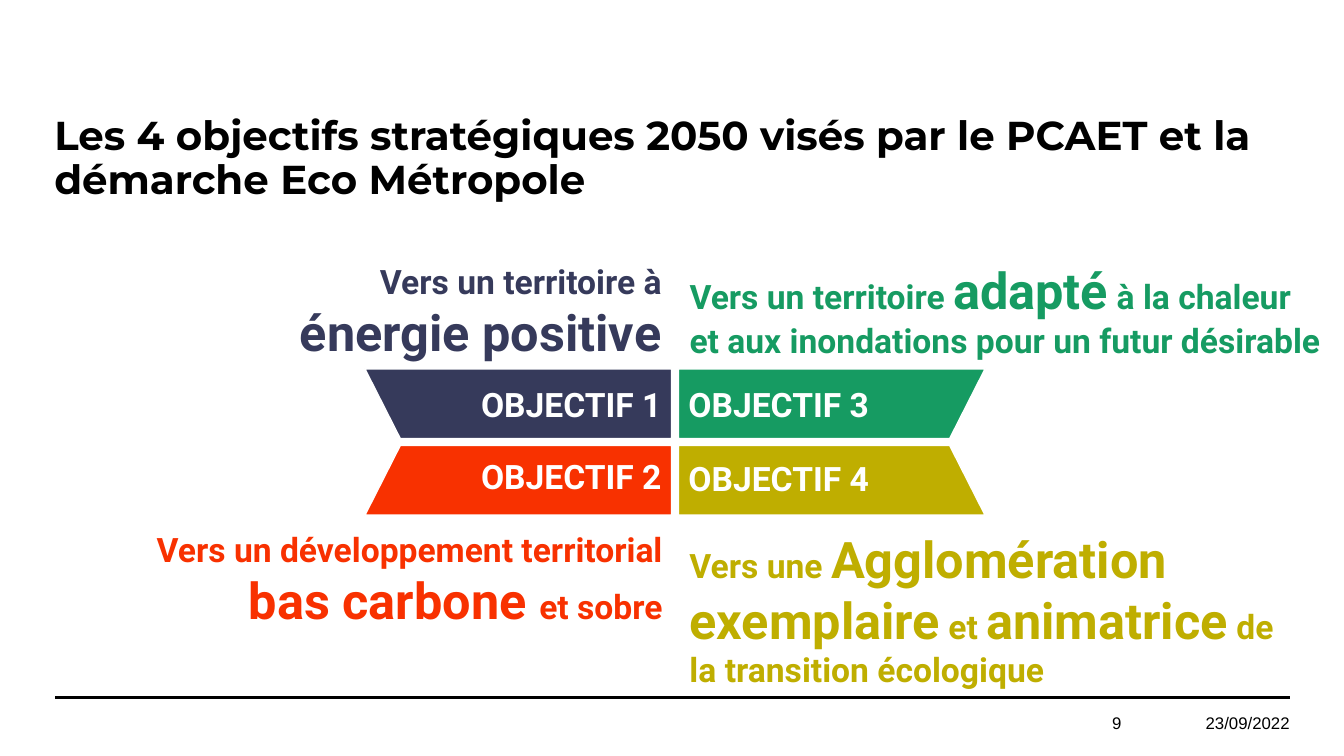
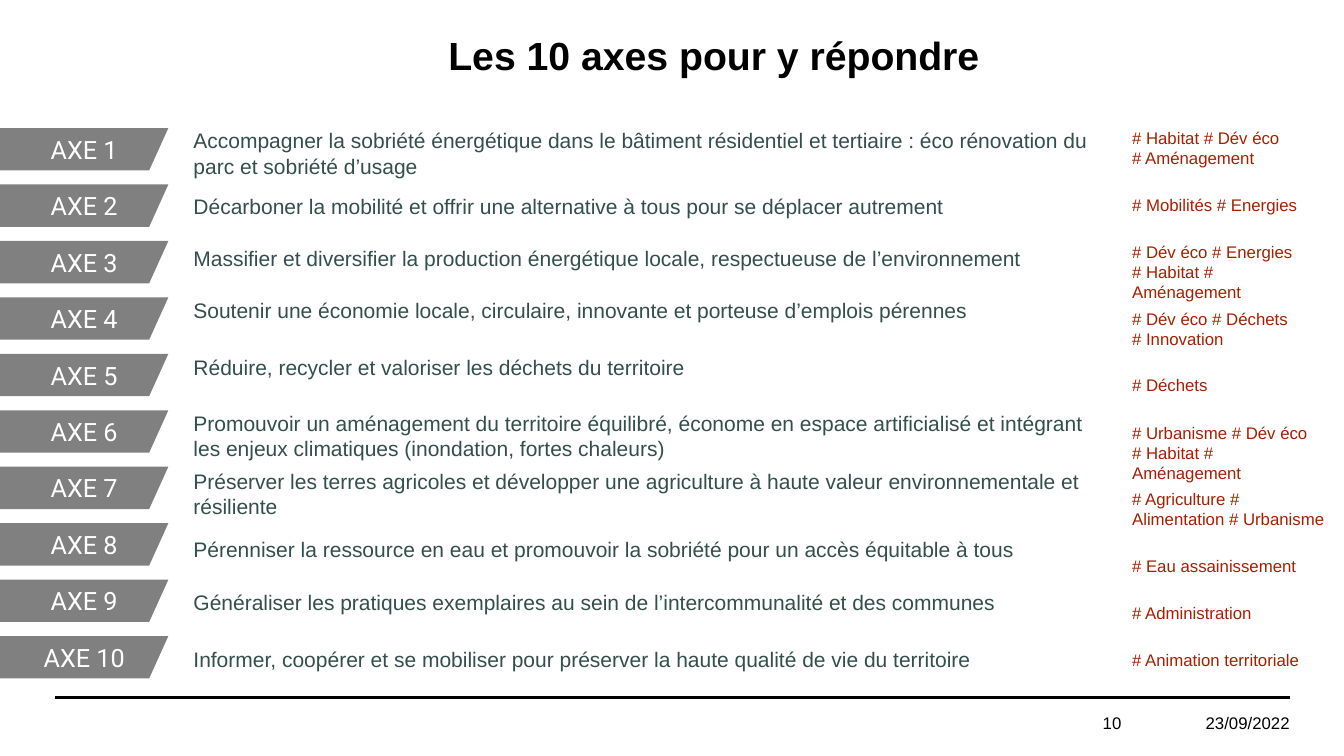
"""Build two slides on the 2050 strategic objectives and the ten action axes."""
import dataclasses
import typing

import lxml.etree
import pptx
import pptx.dml.color
import pptx.enum.shapes
import pptx.enum.text
import pptx.oxml.ns
import pptx.shapes.autoshape
import pptx.shapes.base
import pptx.slide
import pptx.text.text
import pptx.util

Inches = pptx.util.Inches
Align = pptx.enum.text.PP_ALIGN
Anchor = pptx.enum.text.MSO_ANCHOR


@dataclasses.dataclass(frozen=True)
class Theme:
    black: str = "000000"
    white: str = "FFFFFF"
    navy: str = "363A5B"
    red: str = "F83100"
    green: str = "169B62"
    olive: str = "BFAE00"
    tab: str = "808080"
    body: str = "344F4B"
    tag: str = "A62000"
    heading_size: float = 28.8
    centred_heading_size: float = 28
    accent_size: float = 36
    objective_size: float = 24
    tab_size: float = 18
    body_size: float = 15
    small_size: float = 12
    heading_font: str = "Montserrat"
    label_font: str = "Roboto"
    body_font: str = "Arial"


THEME = Theme()


@dataclasses.dataclass(frozen=True)
class Style:
    size: float
    font: str
    color: str
    bold: bool = False


@dataclasses.dataclass(frozen=True)
class Area:
    left: float
    top: float
    width: float
    height: float


@dataclasses.dataclass(frozen=True)
class Objective:
    number: int
    color: str
    on_left: bool
    on_top: bool
    area: Area
    pieces: tuple[str, ...]
    lift: float = 0


@dataclasses.dataclass(frozen=True)
class Axis:
    text: str
    centre: float
    tags: tuple[str, ...]
    tag_width: float = 2


Point = tuple[float, float]
Line = typing.Sequence[tuple[str, Style]]

OBJECTIVES = (
    Objective(1, THEME.navy, True, True, Area(2.01, 2.53, 4.65, 1.11),
              ("Vers un territoire à ", "énergie positive")),
    Objective(2, THEME.red, True, False, Area(0.9, 5.19, 5.77, 1.11),
              ("Vers un développement territorial ", "bas carbone ", "et sobre"), 0.09),
    Objective(3, THEME.green, False, True, Area(6.74, 2.52, 6.48, 1.11),
              ("Vers un territoire ", "adapté",
               " à la chaleur et aux inondations pour un futur désirable")),
    Objective(4, THEME.olive, False, False, Area(6.74, 5.21, 6.06, 1.66),
              ("Vers une ", "Agglomération", " ", "exemplaire", " et ", "animatrice",
               " de la transition écologique"), 0.05),
)

AXES = (
    Axis("Accompagner la sobriété énergétique dans le bâtiment résidentiel et tertiaire : "
         "éco rénovation du parc et sobriété d’usage", 1.52,
         ("# Habitat # Dév éco", "# Aménagement")),
    Axis("Décarboner la mobilité et offrir une alternative à tous pour se déplacer autrement",
         2.04, ("# Mobilités # Energies",)),
    Axis("Massifier et diversifier la production énergétique locale, respectueuse de "
         "l’environnement", 2.56, ("# Dév éco # Energies", "# Habitat # Aménagement")),
    Axis("Soutenir une économie locale, circulaire, innovante et porteuse d’emplois pérennes",
         3.08, ("# Dév éco # Déchets", "# Innovation")),
    Axis("Réduire, recycler et valoriser les déchets du territoire", 3.64, ("# Déchets",)),
    Axis("Promouvoir un aménagement du territoire équilibré, économe en espace artificialisé "
         "et intégrant les enjeux climatiques (inondation, fortes chaleurs)", 4.32,
         ("# Urbanisme # Dév éco", "# Habitat # Aménagement")),
    Axis("Préserver les terres agricoles et développer une agriculture à haute valeur "
         "environnementale et résiliente", 4.9,
         ("# Agriculture # Alimentation # Urbanisme",), 2.18),
    Axis("Pérenniser la ressource en eau et promouvoir la sobriété pour un accès équitable "
         "à tous", 5.45, ("# Eau assainissement",)),
    Axis("Généraliser les pratiques exemplaires au sein de l’intercommunalité et des communes",
         5.97, ("# Administration",)),
    Axis("Informer, coopérer et se mobiliser pour préserver la haute qualité de vie du "
         "territoire", 6.54, ("# Animation territoriale",)),
)


def rgb(color: str) -> pptx.dml.color.RGBColor:
    """Turn a hex string into a colour."""
    return pptx.dml.color.RGBColor.from_string(color)


def apply(target: object, values: dict[str, object]) -> None:
    """Set each named attribute on the target."""
    for name, value in values.items():
        setattr(target, name, value)


def write(frame: pptx.text.text.TextFrame, lines: typing.Sequence[Line], align: Align,
          anchor: Anchor = Anchor.MIDDLE, spacing: float = 1) -> None:
    """Fill a text frame with lines of styled spans."""
    apply(frame, {"word_wrap": True, "vertical_anchor": anchor})
    for index, line in enumerate(lines):
        para = frame.paragraphs[0] if index == 0 else frame.add_paragraph()
        apply(para, {"alignment": align, "line_spacing": spacing})
        for text, style in line:
            span = para.add_run()
            span.text = text
            apply(span.font, {"size": pptx.util.Pt(style.size), "name": style.font,
                              "bold": style.bold})
            span.font.color.rgb = rgb(style.color)


def add_text(page: pptx.slide.Slide, area: Area, lines: typing.Sequence[Line], align: Align,
             anchor: Anchor = Anchor.MIDDLE, spacing: float = 1) -> None:
    """Add a wrapped text box."""
    box = page.shapes.add_textbox(*map(Inches, dataclasses.astuple(area)))
    write(box.text_frame, lines, align, anchor, spacing)


def add_outline(page: pptx.slide.Slide, points: typing.Sequence[Point],
                color: str) -> pptx.shapes.autoshape.Shape:
    """Add a closed filled polygon without an outline."""
    corners = [(Inches(x), Inches(y)) for x, y in points]
    builder = page.shapes.build_freeform(*corners[0])
    builder.add_line_segments(corners[1:], close=True)
    shape = builder.convert_to_shape()
    shape.shadow.inherit = False
    shape.fill.solid()
    shape.fill.fore_color.rgb = rgb(color)
    shape.line.fill.background()
    return shape


def add_page(deck: pptx.presentation.Presentation, title: str, area: Area, style: Style,
             align: Align, number: int) -> pptx.slide.Slide:
    """Add a page with its title, footer rule, page number and date."""
    page = deck.slides.add_slide(deck.slide_layouts[6])
    rule = page.shapes.add_connector(pptx.enum.shapes.MSO_CONNECTOR.STRAIGHT,
                                     *map(Inches, (0.55, 6.92, 12.79, 6.92)))
    rule.line.color.rgb = rgb(THEME.black)
    rule.line.width = pptx.util.Pt(1.5)
    lxml.etree.SubElement(rule.element.spPr, pptx.oxml.ns.qn("a:effectLst"))
    add_text(page, area, [[(title, style)]], align, Anchor.TOP, 0.9)
    small = Style(THEME.small_size, THEME.body_font, THEME.black)
    for text, left, width in (("23/09/2022", 11.64, 1.25), (str(number), 10.44, 0.78)):
        add_text(page, Area(left, 6.97, width, 0.4), [[(text, small)]], Align.RIGHT)
    return page


def draw_objective(page: pptx.slide.Slide, objective: Objective) -> None:
    """Draw a slanted banner and its statement."""
    inner, direction = (6.66, -1) if objective.on_left else (6.73, 1)
    wide, narrow = (3.66, 4.35) if objective.on_top else (5.11, 4.42)
    outer = inner + direction * 3.04
    banner = add_outline(page, [(inner, wide), (outer, wide),
                                (outer - direction * 0.35, narrow), (inner, narrow)],
                         objective.color)
    banner.line.color.rgb = rgb(THEME.white)
    banner.line.width = pptx.util.Pt(1)
    align = Align.RIGHT if objective.on_left else Align.LEFT
    label = Style(THEME.objective_size, THEME.label_font, THEME.white, True)
    write(banner.text_frame, [[(f"OBJECTIF {objective.number}", label)]], align)
    banner.text_frame.margin_bottom = Inches(0.05 + objective.lift)
    plain = dataclasses.replace(label, color=objective.color)
    accent = dataclasses.replace(plain, size=THEME.accent_size)
    spans = [(piece, accent if index % 2 else plain)
             for index, piece in enumerate(objective.pieces)]
    add_text(page, objective.area, [spans], align)


def draw_axes(page: pptx.slide.Slide) -> None:
    """Draw the numbered tabs with their descriptions and tags."""
    label = Style(THEME.tab_size, THEME.label_font, THEME.white)
    body = Style(THEME.body_size, THEME.body_font, THEME.body)
    small = Style(THEME.small_size, THEME.body_font, THEME.tag)
    tag_top = 1.22
    for index, axis in enumerate(AXES):
        top = 1.27 + 0.56 * index
        tab = add_outline(page, [(0, top), (1.67, top), (1.48, top + 0.42), (0, top + 0.42)],
                          THEME.tab)
        write(tab.text_frame, [[(f"AXE {index + 1}", label)]], Align.CENTER)
        add_text(page, Area(1.82, axis.centre - 0.3, 9.08, 0.6), [[(axis.text, body)]],
                 Align.LEFT)
        height, step = (0.5, 0.66) if len(" ".join(axis.tags)) > 25 else (0.3, 0.47)
        add_text(page, Area(11.13, tag_top, axis.tag_width, height),
                 [[(tag, small)] for tag in axis.tags], Align.LEFT, Anchor.TOP)
        tag_top += step


def main() -> None:
    """Build and save the deck."""
    deck = pptx.Presentation()
    apply(deck, {"slide_width": Inches(13.33), "slide_height": Inches(7.5)})
    heading = Style(THEME.heading_size, THEME.heading_font, THEME.black, True)
    page = add_page(deck, "Les 4 objectifs stratégiques 2050 visés par le PCAET et la "
                    "démarche Eco Métropole", Area(0.44, 1.1, 12.46, 1.02), heading,
                    Align.LEFT, 9)
    for objective in OBJECTIVES:
        draw_objective(page, objective)
    heading = Style(THEME.centred_heading_size, THEME.body_font, THEME.black, True)
    draw_axes(add_page(deck, "Les 10 axes pour y répondre", Area(2.41, 0.31, 9.34, 0.74),
                       heading, Align.CENTER, 10))
    deck.save("out.pptx")


if __name__ == "__main__":
    main()
